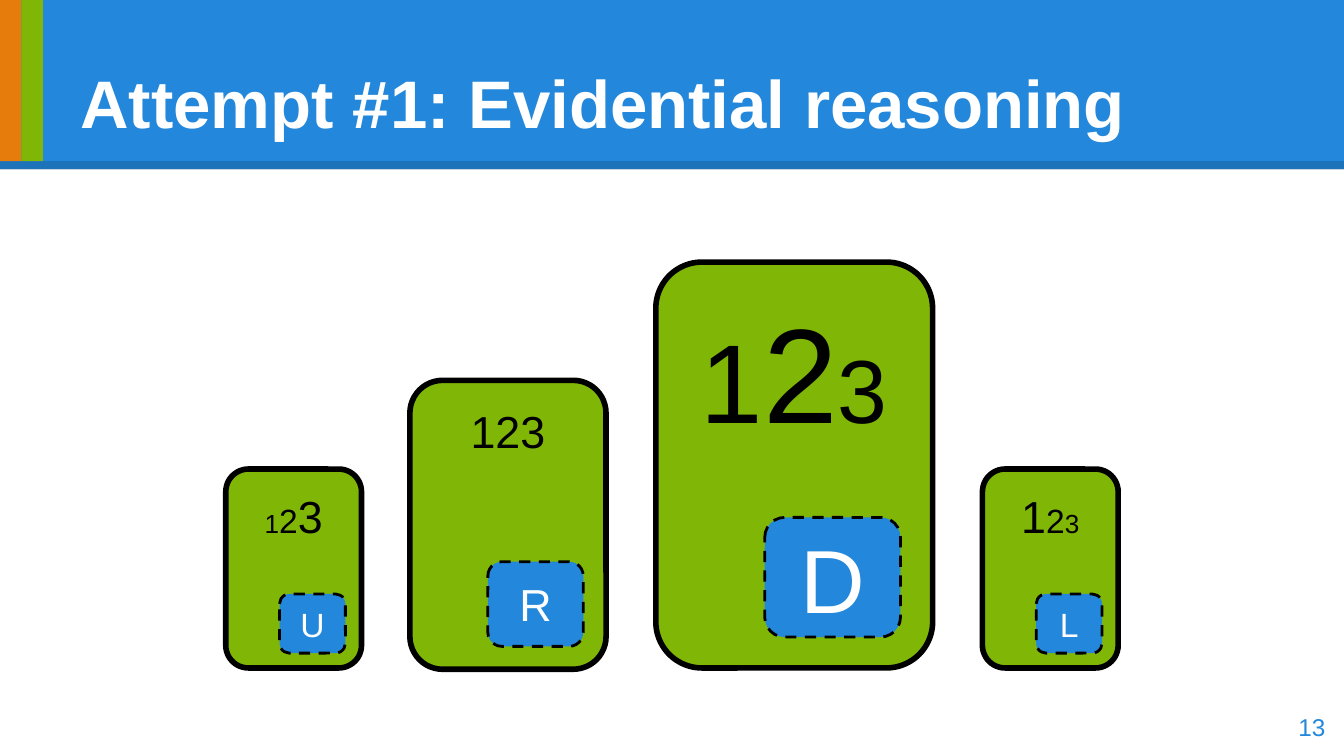
from lxml import etree
from pptx import Presentation
from pptx.dml.color import RGBColor
from pptx.enum.dml import MSO_LINE
from pptx.enum.shapes import MSO_CONNECTOR, MSO_SHAPE
from pptx.enum.text import MSO_ANCHOR, PP_ALIGN
from pptx.oxml.ns import qn
from pptx.util import Inches, Pt

RECTANGLE, ROUNDED = MSO_SHAPE.RECTANGLE, MSO_SHAPE.ROUNDED_RECTANGLE
STRAIGHT, DASH = MSO_CONNECTOR.STRAIGHT, MSO_LINE.DASH
TOP, MIDDLE, BOTTOM = MSO_ANCHOR.TOP, MSO_ANCHOR.MIDDLE, MSO_ANCHOR.BOTTOM
LEFT, CENTER, RIGHT = PP_ALIGN.LEFT, PP_ALIGN.CENTER, PP_ALIGN.RIGHT

COLORS = {"blue": "2388DB", "green": "80B606", "orange": "E67C0B",
          "black": "000000", "white": "FFFFFF"}
FONT = "Arial"
INSET = Inches(0.1)
SLIDE_WIDTH = Inches(10)
SLIDE_HEIGHT = SLIDE_WIDTH * 9 // 16


def color(name):
    return RGBColor.from_string(COLORS[name])


def write_text(shape, runs, font_color="black", bold=False, align=CENTER, anchor=TOP):
    """Write (text, size) runs as one paragraph."""
    frame = shape.text_frame
    frame.word_wrap = True
    frame.vertical_anchor = anchor
    frame.margin_left = frame.margin_right = INSET
    frame.margin_top = frame.margin_bottom = INSET
    paragraph = frame.paragraphs[0]
    paragraph.alignment = align
    for text, size in runs:
        run = paragraph.add_run()
        run.text = text
        run.font.name = FONT
        run.font.size = Pt(size)
        run.font.bold = bold
        run.font.color.rgb = color(font_color)


class SlideBuilder:
    def __init__(self, slide):
        self.slide = slide

    def box(self, kind, bounds, fill, line_width=0, dash=None):
        shape = self.slide.shapes.add_shape(kind, *map(Inches, bounds))
        shape.shadow.inherit = False
        shape.fill.solid()
        shape.fill.fore_color.rgb = color(fill)
        if line_width:
            shape.line.color.rgb = color("black")
            shape.line.width = Pt(line_width)
            if dash:
                shape.line.dash_style = dash
        else:
            shape.line.fill.background()
        return shape

    def text(self, bounds, runs, **text_format):
        shape = self.slide.shapes.add_textbox(*map(Inches, bounds))
        write_text(shape, runs, **text_format)

    def shade_line(self, y, width, opacity):
        line = self.slide.shapes.add_connector(
            STRAIGHT, 0, Inches(y), SLIDE_WIDTH, Inches(y))
        line.line.color.rgb = color("black")
        line.line.width = Pt(width)
        properties = line._element.spPr
        fill_color = properties.find(".//" + qn("a:srgbClr"))
        etree.SubElement(fill_color, qn("a:alpha")).set("val", str(opacity * 1000))
        etree.SubElement(properties, qn("a:effectLst"))

    def card(self, bounds, runs, badge_bounds, letter, letter_size):
        card = self.box(ROUNDED, bounds, "green", 3)
        write_text(card, runs)
        badge = self.box(ROUNDED, badge_bounds, "blue", 1.5, DASH)
        write_text(badge, [(letter, letter_size)], font_color="white", anchor=MIDDLE)


def main():
    presentation = Presentation()
    presentation.slide_width = SLIDE_WIDTH
    presentation.slide_height = SLIDE_HEIGHT
    builder = SlideBuilder(presentation.slides.add_slide(presentation.slide_layouts[6]))

    # Header band with its title
    builder.box(RECTANGLE, (0, 0, 10, 1.26), "blue")
    builder.shade_line(1.23, 4.5, 15)
    builder.text((0.5, 0.23, 9, 0.93), [("Attempt #1: Evidential reasoning", 36)],
                 font_color="white", bold=True, align=LEFT, anchor=BOTTOM)

    # Cards, each with a letter badge
    cards = [
        ((1.68, 3.49, 1.01, 1.48), [("1", 14), ("2", 18), ("3", 24)],
         (2.08, 4.42, 0.49, 0.44), "U", 18),
        ((3.05, 2.83, 1.46, 2.15), [("123", 24)],
         (3.63, 4.18, 0.71, 0.63), "R", 24),
        ((4.88, 1.95, 2.06, 3.02), [("1", 60), ("2", 72), ("3", 48)],
         (5.69, 3.85, 1.01, 0.89), "D", 48),
        ((7.31, 3.49, 1.01, 1.48), [("1", 24), ("2", 18), ("3", 14)],
         (7.71, 4.42, 0.49, 0.44), "L", 18),
    ]
    for card in cards:
        builder.card(*card)

    # Accent stripes
    stripe_width = 0.16
    for index, fill in enumerate(("orange", "green")):
        builder.box(RECTANGLE, (index * stripe_width, 0, stripe_width, 1.2), fill)

    # Slide number
    builder.text((9.36, 5.19, 0.6, 0.43), [("13", 13)],
                 font_color="blue", align=RIGHT, anchor=MIDDLE)

    presentation.save("out.pptx")


if __name__ == "__main__":
    main()
